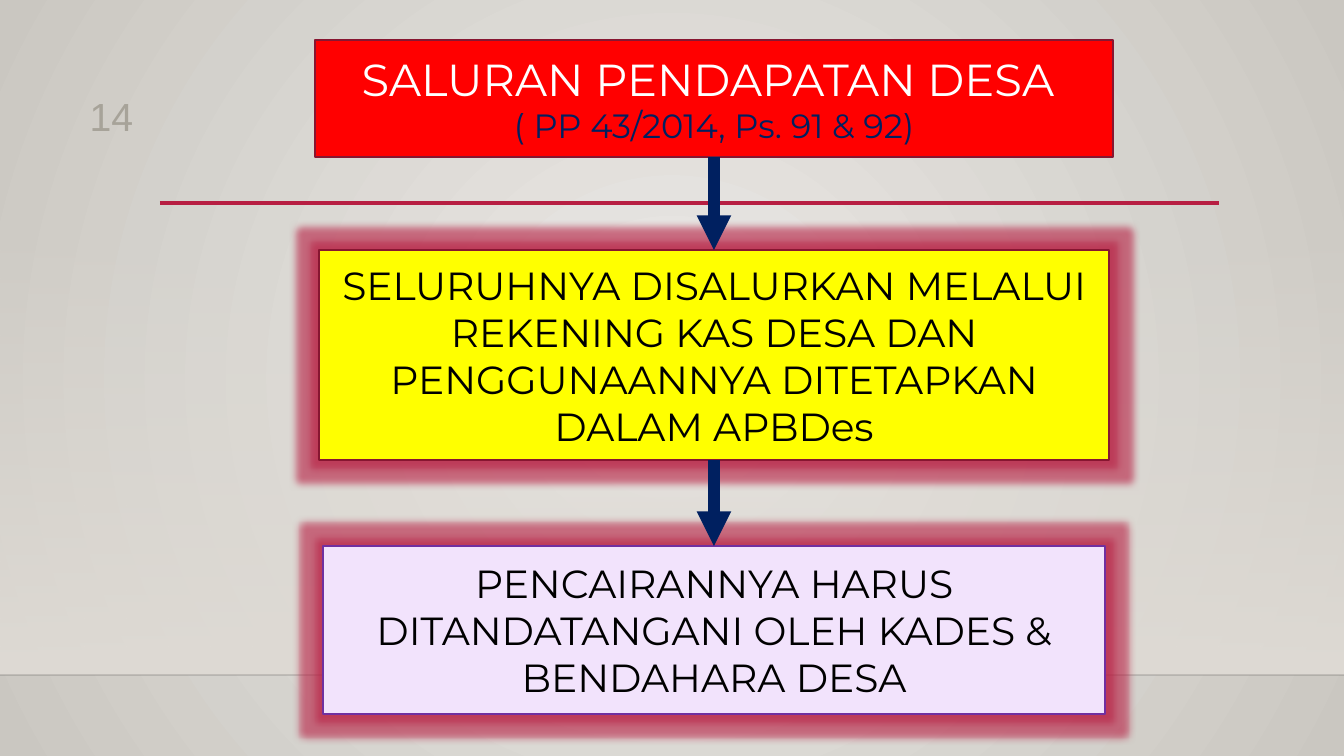
import pptx
import pptx.util
import pptx.oxml
import pptx.oxml.ns
import pptx.dml.color
import pptx.enum.text
import pptx.enum.shapes

BOXES = [
    dict(top=40, wide=798, high=117, fill="FF0000", line="871631", glow=False,
         text=[("SALURAN PENDAPATAN DESA ", 32, "FFFFFF"),
               ("( PP 43/2014, Ps. 91 & 92)", 24, "002060")]),
    dict(top=250, wide=790, high=210, fill="FFFF00", line="871631", glow=True,
         text=[("SELURUHNYA DISALURKAN MELALUI REKENING KAS DESA DAN "
                "PENGGUNAANNYA DITETAPKAN DALAM APBDes", 28, "000000")]),
    dict(top=546, wide=782, high=168, fill="F2E3FC", line="7030A0", glow=True,
         text=[("PENCAIRANNYA HARUS DITANDATANGANI OLEH KADES & "
                "BENDAHARA DESA", 28, "000000")]),
]
PAGE = "14"
WIDE, HIGH, MID = 1344, 756, 714
NS = pptx.oxml.ns.nsdecls("a")
ALIGN = pptx.enum.text.PP_ALIGN
RECT = pptx.enum.shapes.MSO_SHAPE.RECTANGLE


def px(n):
    return pptx.util.Emu(round(n * 914400 / 100.8))


def tint(code):
    return pptx.dml.color.RGBColor.from_string(code)


def xml(text):
    return pptx.oxml.parse_xml(text.replace(">", f" {NS}>", 1))


def blend(stops, path):
    marks = "".join(
        f'<a:gs pos="{pos}"><a:srgbClr val="{code}"><a:alpha val="{alpha}"/>'
        f'</a:srgbClr></a:gs>' for pos, code, alpha in stops)
    return xml(f'<a:gradFill rotWithShape="1"><a:gsLst>{marks}</a:gsLst>{path}</a:gradFill>')


def swap(fill, new):
    fill.solid()
    old = fill._xPr.find(pptx.oxml.ns.qn("a:solidFill"))
    fill._xPr.replace(old, new)


def write(frame, text, first=False, size=28, color="000000", font="Montserrat",
          align=ALIGN.CENTER):
    para = frame.paragraphs[0] if first else frame.add_paragraph()
    para.alignment = align
    run = para.add_run()
    run.text = text
    run.font.size = pptx.util.Pt(size)
    run.font.name = font
    run.font.color.rgb = tint(color)


def block(left, top, wide, high):
    shape = slide.shapes.add_shape(RECT, px(left), px(top), px(wide), px(high))
    shape.shadow.inherit = False
    return shape


def rule(x1, y1, x2, y2, color, width):
    line = slide.shapes.add_connector(
        pptx.enum.shapes.MSO_CONNECTOR.STRAIGHT, px(x1), px(y1), px(x2), px(y2))
    line.line.color.rgb = tint(color)
    line.line.width = pptx.util.Pt(width)
    line._element.spPr.append(xml("<a:effectLst></a:effectLst>"))
    return line


deck = pptx.Presentation()
deck.slide_width, deck.slide_height = px(WIDE), px(HIGH)
slide = deck.slides.add_slide(deck.slide_layouts[6])

swap(slide.background.fill, blend(
    [(0, "ECEAE7", 100000), (100000, "CAC7C1", 100000)],
    '<a:path path="circle"><a:fillToRect l="50000" t="50000" r="50000" b="50000"/></a:path>'))
wall = block(0, 223, WIDE, 452)
wall.line.fill.background()
swap(wall.fill, blend(
    [(0, "DFDBD5", 0), (100000, "DFDBD5", 100000)],
    '<a:lin ang="5400000" scaled="0"/>'))
floor = rule(0, 675, WIDE, 675, "000001", 1)
floor.line._ln.find(".//" + pptx.oxml.ns.qn("a:srgbClr")).append(
    xml('<a:alpha val="20000"></a:alpha>'))
rule(160, 203, 1219, 203, "B71E42", 2.5)

cards = []
for box in BOXES:
    card = block(MID - box["wide"] / 2, box["top"], box["wide"], box["high"])
    card.fill.solid()
    card.fill.fore_color.rgb = tint(box["fill"])
    card.line.color.rgb = tint(box["line"])
    card.line.width = pptx.util.Pt(1.25)
    if box["glow"]:
        card._element.spPr.find(pptx.oxml.ns.qn("a:effectLst")).append(xml(
            '<a:glow rad="139700"><a:srgbClr val="B71E42">'
            '<a:alpha val="60000"/></a:srgbClr></a:glow>'))
    frame = card.text_frame
    frame.word_wrap = True
    frame.vertical_anchor = pptx.enum.text.MSO_ANCHOR.MIDDLE
    for row, (text, size, color) in enumerate(box["text"]):
        write(frame, text, first=row == 0, size=size, color=color)
    cards.append(card)

for high, low in zip(cards, cards[1:]):
    arrow = rule(MID, 0, MID, 1, "002060", 8.25)
    arrow.begin_connect(high, 2)
    arrow.end_connect(low, 0)
    arrow.line._ln.append(xml('<a:tailEnd type="triangle"></a:tailEnd>'))

page = slide.shapes.add_textbox(px(53), px(88), px(90), px(55)).text_frame
page.word_wrap = True
page.vertical_anchor = pptx.enum.text.MSO_ANCHOR.MIDDLE
write(page, PAGE, first=True, color="A7A399", font="Arial", align=ALIGN.RIGHT)

deck.save("out.pptx")
